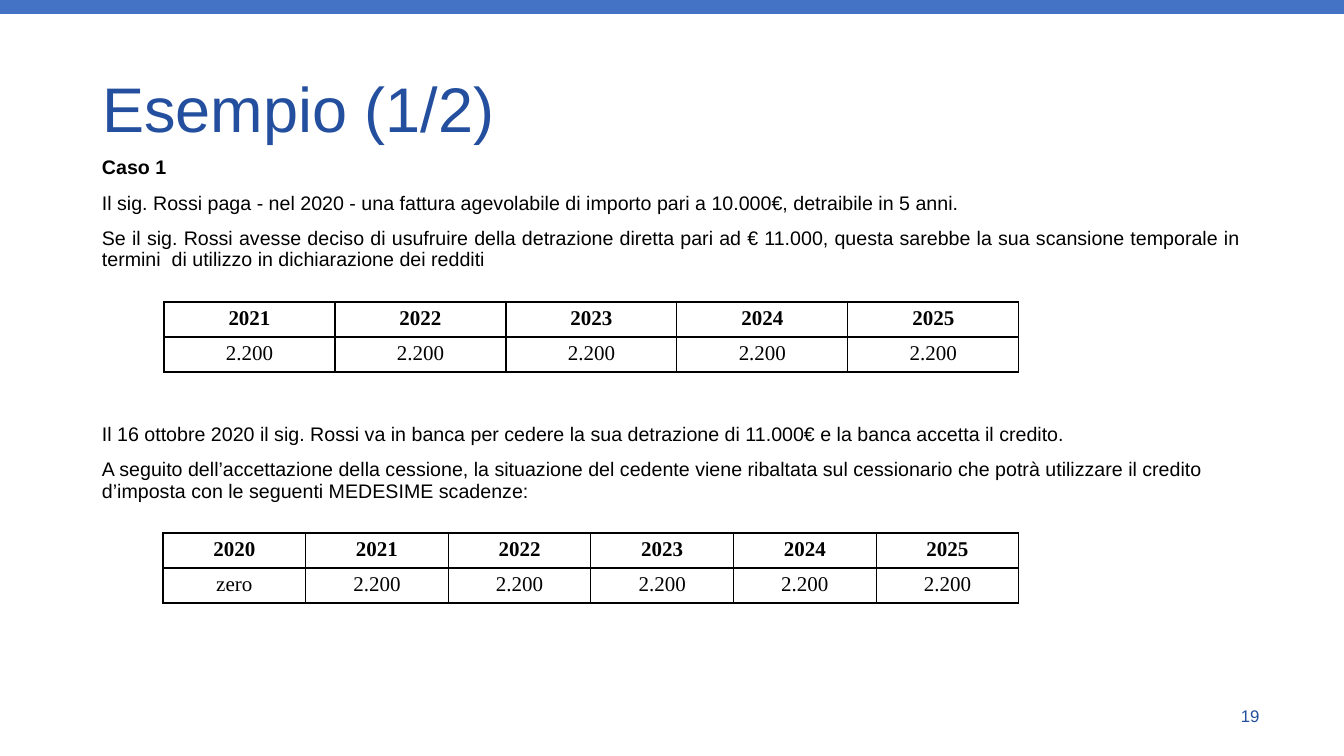
from lxml import etree
from pptx import Presentation
from pptx.dml.color import RGBColor
from pptx.enum.shapes import MSO_SHAPE
from pptx.enum.text import MSO_ANCHOR, MSO_AUTO_SIZE, PP_ALIGN
from pptx.oxml.ns import qn
from pptx.util import Emu, Pt

RECTANGLE = MSO_SHAPE.RECTANGLE
LEFT, CENTER, JUSTIFY = PP_ALIGN.LEFT, PP_ALIGN.CENTER, PP_ALIGN.JUSTIFY
TOP, BOTTOM = MSO_ANCHOR.TOP, MSO_ANCHOR.BOTTOM
NO_AUTOFIT = MSO_AUTO_SIZE.NONE

EMU_PER_PX = 914400 / 100.8
SLIDE_WIDTH, SLIDE_HEIGHT = 1344, 756
TEXT_LEFT, TEXT_WIDTH = 92, 1159
ROW_HEIGHT = 35
COLORS = {"bar": "4472C4", "title": "234F9E", "text": "000000"}
SANS, SERIF = "Arial", "Times New Roman"

# Text, alignment, bold, space before in points (the wide gap holds the first table)
CASE_PARAGRAPHS = [
    ("Caso 1", LEFT, True, 0),
    ("Il sig. Rossi paga - nel 2020 - una fattura agevolabile di importo pari a "
     "10.000€, detraibile in 5 anni.", JUSTIFY, False, 10),
    ("Se il sig. Rossi avesse deciso di usufruire della detrazione diretta pari ad "
     "€ 11.000, questa sarebbe la sua scansione temporale in termini  di utilizzo in "
     "dichiarazione dei redditi", JUSTIFY, False, 10),
    ("Il 16 ottobre 2020 il sig. Rossi va in banca per cedere la sua detrazione di "
     "11.000€ e la banca accetta il credito.", LEFT, False, 110),
    ("A seguito dell’accettazione della cessione, la situazione del cedente viene "
     "ribaltata sul cessionario che potrà utilizzare il credito d’imposta con le "
     "seguenti MEDESIME scadenze:", LEFT, False, 10),
]
DEDUCTION_ROWS = [["2021", "2022", "2023", "2024", "2025"], ["2.200"] * 5]
TRANSFER_ROWS = [["2020", *DEDUCTION_ROWS[0]], ["zero", *DEDUCTION_ROWS[1]]]


def px(length):
    return Emu(round(length * EMU_PER_PX))


def write(paragraph, text, *, size, color="text", font=SANS, bold=False,
          align=LEFT, line=0.9, before=0, after=0):
    paragraph.alignment = align
    paragraph.line_spacing = line
    paragraph.space_before, paragraph.space_after = Pt(before), Pt(after)
    run = paragraph.add_run()
    run.text = text
    run.font.size, run.font.name, run.font.bold = Pt(size), font, bold
    run.font.color.rgb = RGBColor.from_string(COLORS[color])


def add_text_frame(slide, left, top, width, height):
    frame = slide.shapes.add_textbox(px(left), px(top), px(width), px(height)).text_frame
    frame.word_wrap = True
    return frame


def add_top_bar(slide):
    bar = slide.shapes.add_shape(RECTANGLE, 0, 0, px(SLIDE_WIDTH), px(14))
    bar.shadow.inherit = False
    bar.fill.solid()
    bar.fill.fore_color.rgb = RGBColor.from_string(COLORS["bar"])
    bar.line.fill.background()


def add_title(slide, text):
    title = slide.shapes.title
    title.left, title.top = px(TEXT_LEFT), px(108)
    title.width, title.height = px(TEXT_WIDTH), px(43)
    frame = title.text_frame
    frame.auto_size = NO_AUTOFIT
    frame.vertical_anchor = BOTTOM
    write(frame.paragraphs[0], text, size=45, color="title")


def add_case_text(slide):
    frame = add_text_frame(slide, TEXT_LEFT, 153, TEXT_WIDTH, 495)
    for index, (text, align, bold, before) in enumerate(CASE_PARAGRAPHS):
        paragraph = frame.add_paragraph() if index else frame.paragraphs[0]
        write(paragraph, text, size=14, bold=bold, align=align, before=before)


def outline_cell(cell):
    properties = cell._tc.get_or_add_tcPr()
    for side in ("a:lnL", "a:lnR", "a:lnT", "a:lnB"):
        border = etree.SubElement(properties, qn(side), w=str(Pt(1)))
        fill = etree.SubElement(border, qn("a:solidFill"))
        etree.SubElement(fill, qn("a:srgbClr"), val=COLORS["text"])


def add_schedule(slide, rows, left, top, width):
    columns = len(rows[0])
    table = slide.shapes.add_table(len(rows), columns, px(left), px(top), px(width),
                                   px(ROW_HEIGHT * len(rows))).table
    table.first_row = table.horz_banding = False
    for column in table.columns:
        column.width = px(width / columns)
    for row_index, values in enumerate(rows):
        table.rows[row_index].height = px(ROW_HEIGHT)
        for column_index, value in enumerate(values):
            cell = table.cell(row_index, column_index)
            outline_cell(cell)
            cell.fill.background()
            cell.margin_left = cell.margin_right = px(21)
            cell.margin_top, cell.margin_bottom = px(3), 0
            cell.vertical_anchor = TOP
            write(cell.text_frame.paragraphs[0], value, size=15, font=SERIF,
                  bold=row_index == 0, align=CENTER, line=1.07, after=8)


def main():
    presentation = Presentation()
    presentation.slide_width = px(SLIDE_WIDTH)
    presentation.slide_height = px(SLIDE_HEIGHT)
    slide = presentation.slides.add_slide(presentation.slide_layouts[5])

    # Heading and page frame
    add_top_bar(slide)
    add_title(slide, "Esempio (1/2)")
    page_number = add_text_frame(slide, 1231, 701, 85, 30)
    write(page_number.paragraphs[0], "19", size=12, color="title", line=1.0)

    # Worked case with its two schedules
    add_case_text(slide)
    add_schedule(slide, DEDUCTION_ROWS, 164, 302, 855)
    add_schedule(slide, TRANSFER_ROWS, 163, 533, 856)

    presentation.save("out.pptx")


if __name__ == "__main__":
    main()
